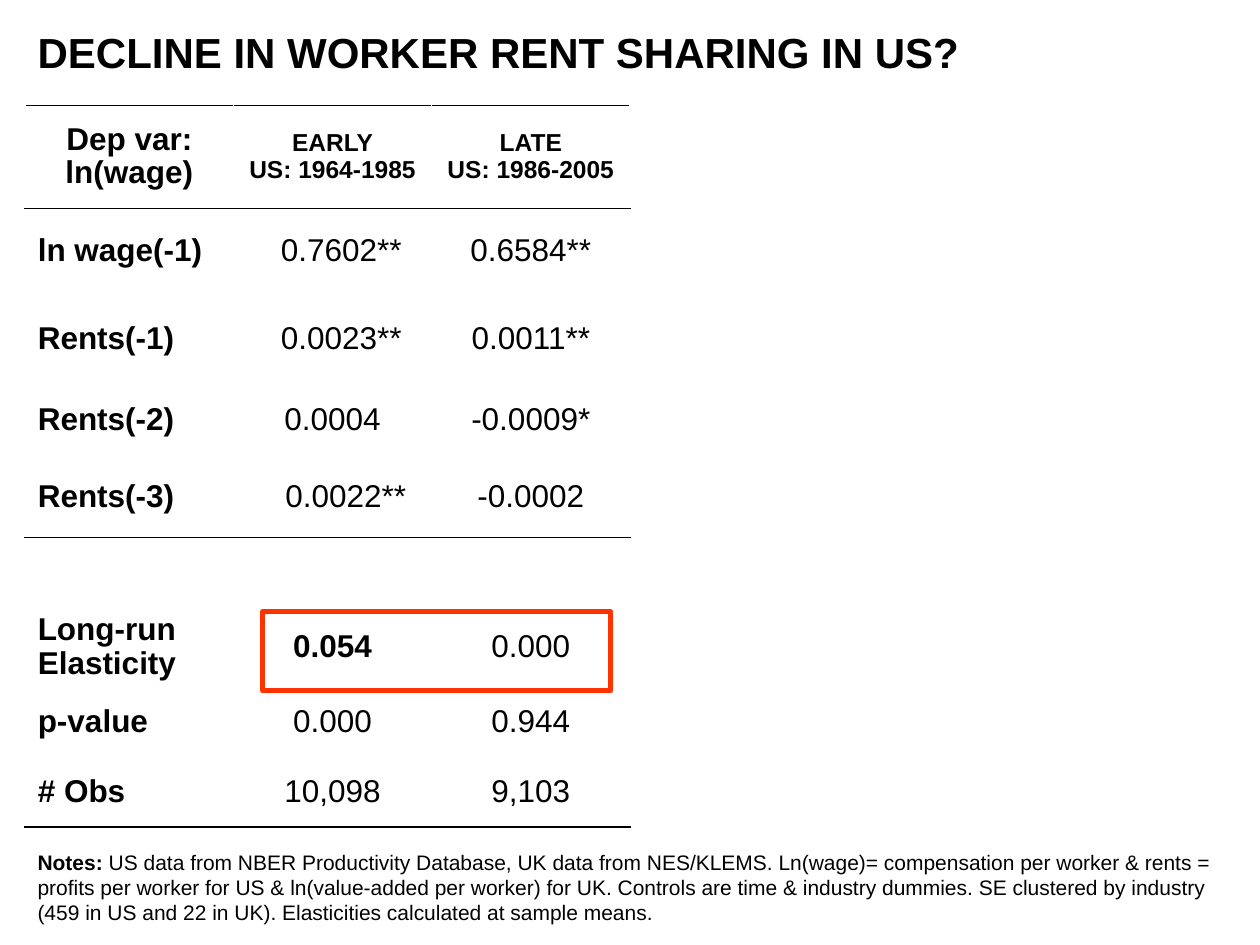
from lxml.etree import SubElement
from pptx import Presentation
from pptx.dml.color import RGBColor
from pptx.enum.shapes import MSO_SHAPE
from pptx.enum.text import MSO_ANCHOR, MSO_AUTO_SIZE, PP_ALIGN
from pptx.oxml.ns import qn
from pptx.util import Pt

COLORS = {"ink": "000000", "highlight": "FF3300"}


def add_span(para, text, size, bold):
    span = para.add_run()
    span.text = text
    span.font.name = "Arial"
    span.font.size = Pt(size)
    span.font.bold = bold
    span.font.color.rgb = RGBColor.from_string(COLORS["ink"])


def add_border(cell, side):
    line = SubElement(cell._tc.get_or_add_tcPr(), qn(f"a:{side}"), w=str(Pt(1)))
    fill = SubElement(line, qn("a:solidFill"))
    SubElement(fill, qn("a:srgbClr"), val=COLORS["ink"])


deck = Presentation()
deck.slide_width, deck.slide_height = Pt(720), Pt(540)
page = deck.slides.add_slide(deck.slide_layouts[6])

# Regression table: row height, then label, early and late values
rows = [
    (59, "Dep var: ln(wage)", "EARLY\nUS: 1964-1985", "LATE\nUS: 1986-2005"),
    (49, "ln wage(-1)", "0.7602**", "0.6584**"),
    (51, "Rents(-1)", "0.0023**", "0.0011**"),
    (42.5, "Rents(-2)", "0.0004", "-0.0009*"),
    (45.4, "Rents(-3)", "0.0022**", "-0.0002"),
    (39.6, "", "", ""),
    (46.6, "Long-run Elasticity", "0.054", "0.000"),
    (39.6, "p-value", "0.000", "0.944"),
    (39.6, "# Obs", "10,098", "9,103"),
]
column_widths = [119, 113.3, 113.3]
top_ruled, bottom_ruled = {0, 1, 5}, {0, 4, 8}
early_indents = {1: 10, 2: 10, 4: 15}  # shifts starred values to the right
bold_values = {(6, 1)}

table = page.shapes.add_table(
    len(rows), len(column_widths), Pt(14.4), Pt(60.3),
    Pt(sum(column_widths)), Pt(sum(row[0] for row in rows))).table
table.first_row = table.horz_banding = False
for column, width in zip(table.columns, column_widths):
    column.width = Pt(width)

for r, (height, *texts) in enumerate(rows):
    table.rows[r].height = Pt(height)
    for c, text in enumerate(texts):
        cell = table.cell(r, c)
        if r in top_ruled:
            add_border(cell, "lnT")
        if r in bottom_ruled:
            add_border(cell, "lnB")
        cell.fill.background()
        cell.vertical_anchor = MSO_ANCHOR.MIDDLE
        if c == 1 and r in early_indents:
            cell.margin_left = Pt(7.2 + early_indents[r])
        if not text:
            continue
        for i, line in enumerate(text.split("\n")):
            frame = cell.text_frame
            para = frame.add_paragraph() if i else frame.paragraphs[0]
            para.line_spacing = 0.95
            para.alignment = PP_ALIGN.CENTER if r == 0 or c else PP_ALIGN.LEFT
            size = 14 if r == 0 and c else 18
            add_span(para, line, size, r == 0 or c == 0 or (r, c) in bold_values)

# Title and notes
notes = (
    "US data from NBER Productivity Database, UK data from NES/KLEMS. "
    "Ln(wage)= compensation per worker & rents = profits per worker for US & "
    "ln(value-added per worker) for UK. Controls are time & industry dummies. "
    "SE clustered by industry (459 in US and 22 in UK). "
    "Elasticities calculated at sample means.")
text_boxes = [
    (11.5, 546.5, 36, 24, False,
     [("DECLINE IN WORKER RENT SHARING IN US?", True)]),
    (481.7, 696.2, 51, 12, True, [("Notes: ", True), (notes, False)]),
]
for top, width, height, size, wrap, spans in text_boxes:
    box = page.shapes.add_textbox(Pt(14.4), Pt(top), Pt(width), Pt(height))
    box.text_frame.word_wrap = wrap
    box.text_frame.auto_size = MSO_AUTO_SIZE.SHAPE_TO_FIT_TEXT
    for text, bold in spans:
        add_span(box.text_frame.paragraphs[0], text, size, bold)

# Frame around the elasticities
frame_box = page.shapes.add_shape(
    MSO_SHAPE.RECTANGLE, Pt(150.2), Pt(349.5), Pt(198.7), Pt(45.3))
frame_box.shadow.inherit = False
frame_box.fill.background()
frame_box.line.color.rgb = RGBColor.from_string(COLORS["highlight"])
frame_box.line.width = Pt(3)

deck.save("out.pptx")
